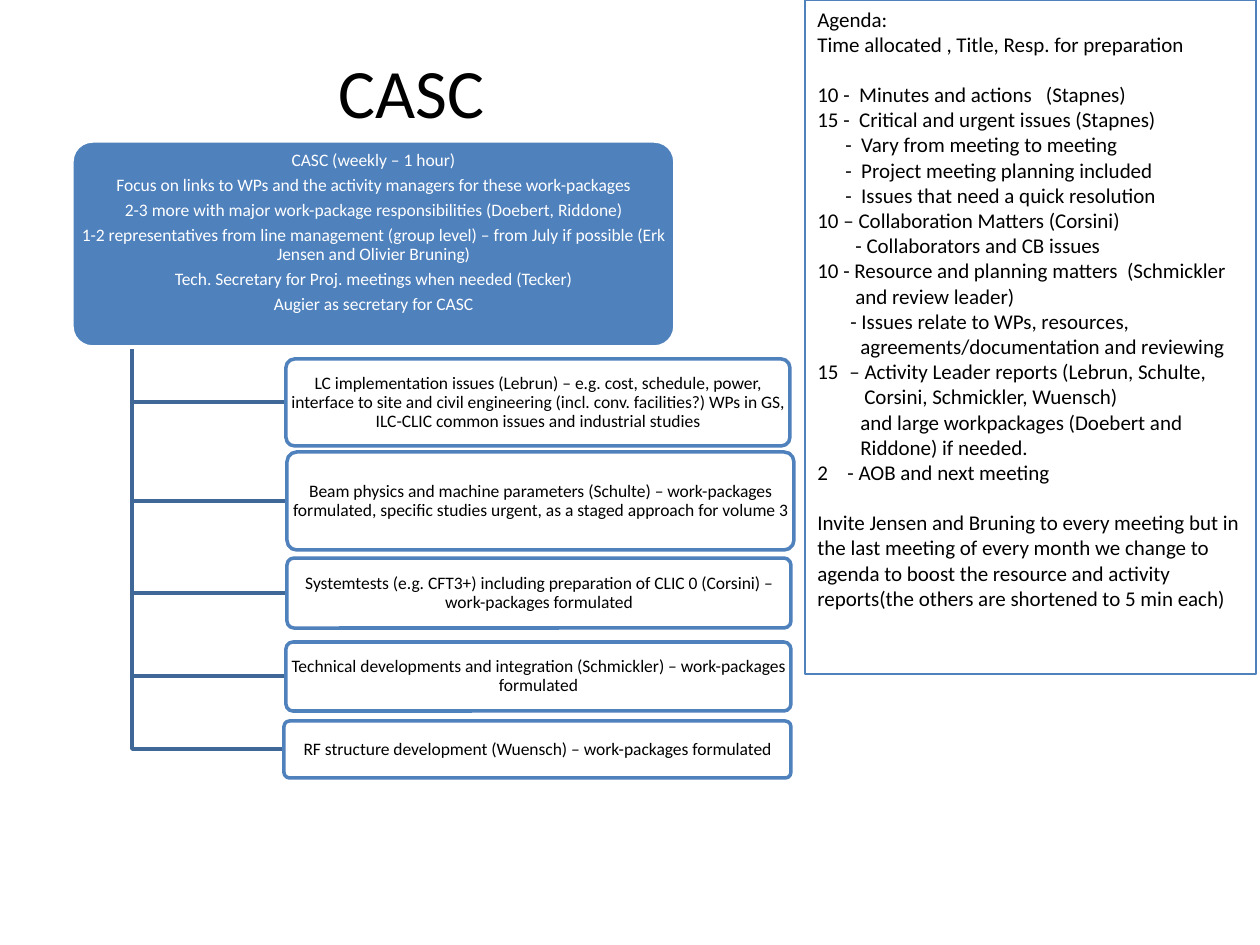
from lxml import etree
from pptx import Presentation
from pptx.dml.color import RGBColor
from pptx.enum.shapes import MSO_SHAPE as Shape
from pptx.enum.text import MSO_ANCHOR as Anchor, PP_ALIGN as Align
from pptx.oxml.ns import qn
from pptx.util import Pt

BLACK = RGBColor(0x00, 0x00, 0x00)
WHITE = RGBColor(0xFF, 0xFF, 0xFF)
BLUE = RGBColor(0x4F, 0x81, 0xBD)
DARK_BLUE = RGBColor(0x3F, 0x67, 0x97)
EMU_PER_PX = 914400 / 126


def px(length):
    return round(length * EMU_PER_PX)


def write(shape, lines, size, color, align, line_spacing=1.0, space_after=0):
    text_frame = shape.text_frame
    text_frame.word_wrap = True
    text_frame.text = "\n".join(lines)
    for paragraph in text_frame.paragraphs:
        paragraph.alignment = align
        paragraph.line_spacing = line_spacing
        paragraph.space_after = Pt(space_after)
        for run in paragraph.runs:
            run.font.name = "Calibri"
            run.font.size = Pt(size)
            run.font.color.rgb = color
    return text_frame


presentation = Presentation()
presentation.slide_width = px(1260)
presentation.slide_height = px(945)
slide = presentation.slides.add_slide(presentation.slide_layouts[6])
shapes = slide.shapes

title = shapes.add_textbox(px(88), px(38), px(663), px(105))
write(title, ["CASC "], 39.6, BLACK, Align.CENTER).vertical_anchor = Anchor.MIDDLE

committee_lines = [
    "CASC (weekly – 1 hour)",
    "Focus on links to WPs and the activity managers for these work-packages",
    "2-3 more with major work-package responsibilities (Doebert, Riddone)",
    "1-2 representatives from line management (group level) – from July if possible (Erk Jensen and Olivier Bruning)",
    "Tech. Secretary for Proj. meetings when needed (Tecker)",
    "Augier as secretary for CASC",
]
activities = [
    (286, 359, 504, 87, "LC implementation issues (Lebrun) – e.g. cost, schedule, power, interface to site and civil engineering (incl. conv. facilities?) WPs in GS, ILC-CLIC common issues and industrial studies"),
    (287, 452, 507, 98, "Beam physics and machine parameters (Schulte) – work-packages formulated, specific studies urgent, as a staged approach for volume 3"),
    (287, 558, 504, 70, "Systemtests (e.g. CFT3+) including preparation of CLIC 0 (Corsini) – work-packages formulated"),
    (286, 642, 505, 69, "Technical developments and integration (Schmickler) – work-packages formulated"),
    (284, 721, 507, 57, "RF structure development (Wuensch) – work-packages formulated"),
]

TRUNK_X, TRUNK_TOP = 132, 347
for left, top, width, height, label in activities:
    middle = top + height // 2
    builder = shapes.build_freeform(TRUNK_X, TRUNK_TOP, scale=EMU_PER_PX)
    builder.add_line_segments([(TRUNK_X, middle), (left, middle)], close=False)
    branch = builder.convert_to_shape()
    branch.shadow.inherit = False
    branch.fill.background()
    branch.line.color.rgb = DARK_BLUE
    branch.line.width = Pt(2)

boxes = [(72, 141, 603, 206, committee_lines, BLUE, WHITE, WHITE)]
boxes += [(*frame, [label], WHITE, BLUE, BLACK) for *frame, label in activities]
for left, top, width, height, lines, fill, outline, color in boxes:
    box = shapes.add_shape(Shape.ROUNDED_RECTANGLE, px(left), px(top), px(width), px(height))
    box.adjustments[0] = 0.1
    box.shadow.inherit = False
    box.fill.solid()
    box.fill.fore_color.rgb = fill
    box.line.color.rgb = outline
    box.line.width = Pt(2)
    text_frame = write(box, lines, 10, color, Align.CENTER, 0.9, 3.5)
    text_frame.margin_left = text_frame.margin_right = px(2)
    text_frame.margin_top = text_frame.margin_bottom = px(2)
    text_frame.vertical_anchor = Anchor.TOP if lines is committee_lines else Anchor.MIDDLE

agenda_items = [
    ("Agenda:", 0, 0),
    ("Time allocated , Title, Resp. for preparation", 0, 0),
    ("10 -  Minutes and actions   (Stapnes)", 0, 25),
    ("15 -  Critical and urgent issues (Stapnes)", 0, 0),
    ("-  Vary from meeting to meeting", 28, 0),
    ("-  Project meeting planning included", 28, 0),
    ("-  Issues that need a quick resolution", 28, 0),
    ("10 – Collaboration Matters (Corsini)", 0, 0),
    ("- Collaborators and CB issues", 38, 0),
    ("10 - Resource and planning matters  (Schmickler", 0, 0),
    ("and review leader)", 38, 0),
    ("- Issues relate to WPs, resources,", 33, 0),
    ("agreements/documentation and reviewing", 43, 0),
    ("– Activity Leader reports (Lebrun, Schulte,", 32, 0),
    ("Corsini, Schmickler, Wuensch)", 47, 0),
    ("and large workpackages (Doebert and", 43, 0),
    ("Riddone) if needed.", 43, 0),
    ("2\t- AOB and next meeting", 30, 0),
    ("Invite Jensen and Bruning to every meeting but in the last meeting of every month we change to agenda to boost the resource and activity reports(the others are shortened to 5 min each)", 0, 25),
]
agenda = shapes.add_shape(Shape.RECTANGLE, px(805), px(0), px(451), px(674))
agenda.shadow.inherit = False
agenda.fill.background()
agenda.line.color.rgb = BLUE
agenda.line.width = Pt(0.75)
text_frame = write(agenda, [text for text, _, _ in agenda_items], 12, BLACK, Align.LEFT)
text_frame.vertical_anchor = Anchor.TOP
for paragraph, (text, indent, gap) in zip(text_frame.paragraphs, agenda_items):
    paragraph.space_before = Pt(gap * 72 / 126)
    properties = paragraph._p.get_or_add_pPr()
    properties.set("marL", str(px(indent)))
    numbered = text.startswith("– Activity")
    hanging = numbered or "\t" in text
    properties.set("indent", str(px(-indent if hanging else 0)))
    if numbered:
        etree.SubElement(properties, qn("a:buAutoNum"), type="arabicPlain", startAt="15")

committee = next(shape for shape in shapes if shape.has_text_frame and shape.text_frame.text.startswith("CASC (weekly"))
committee.text_frame.margin_top = px(4)

presentation.save("out.pptx")
